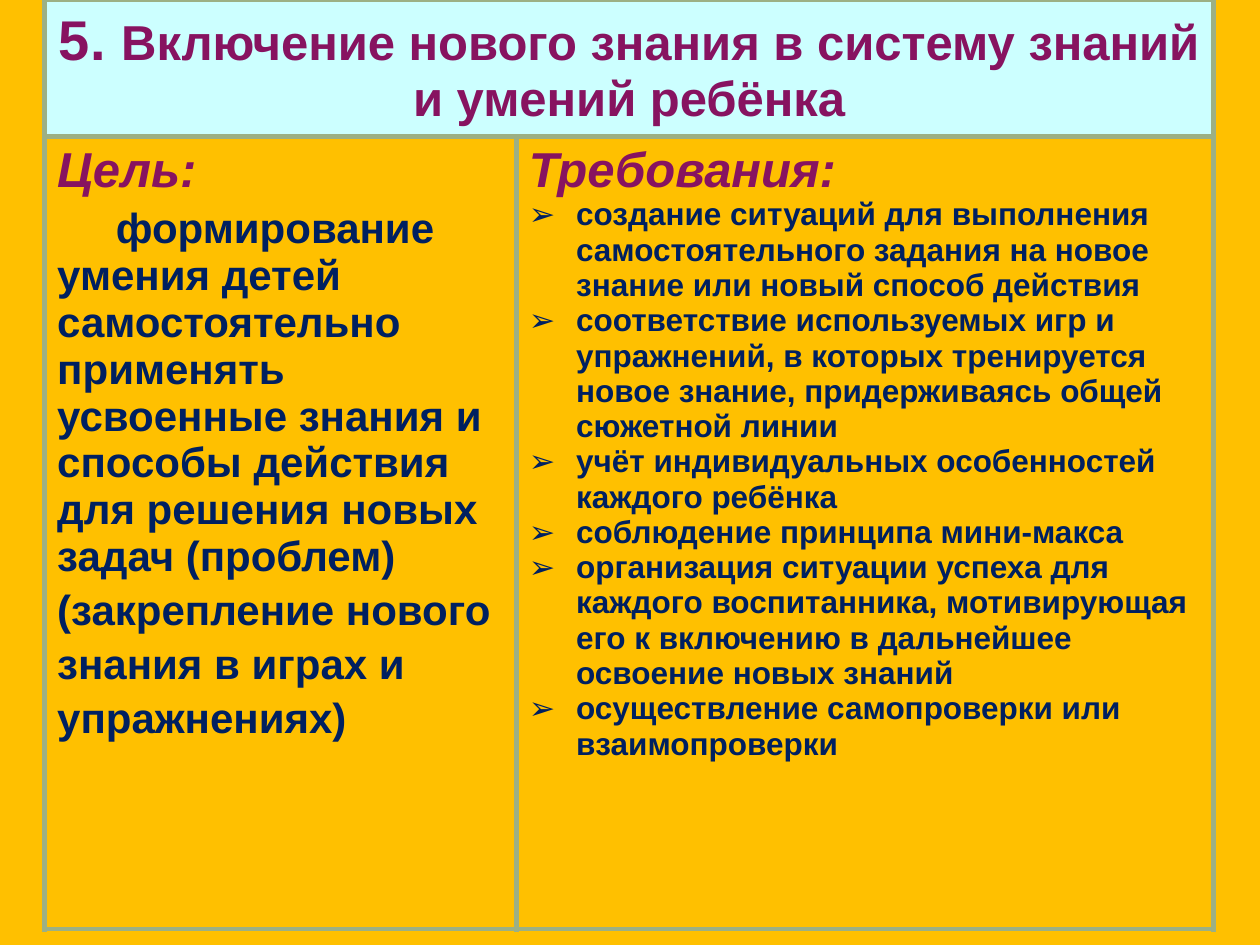
from lxml.etree import SubElement as Sub
from pptx import Presentation
from pptx.dml.color import RGBColor as RGB
from pptx.enum.text import MSO_ANCHOR as Anchor, PP_ALIGN as Align
from pptx.oxml import parse_xml
from pptx.oxml.ns import qn
from pptx.util import Pt

GOLD = RGB(0xFF, 0xC0, 0x00)
ICE = RGB(0xCC, 0xFF, 0xFF)
PLUM = RGB(0x87, 0x13, 0x60)
NAVY = RGB(0x00, 0x20, 0x60)
SAGE = RGB(0x9C, 0xB0, 0x84)
NS = "http://schemas.openxmlformats.org/drawingml/2006/main"

COLS = (269.5, 398.5)
ROWS = (78, 453)
HANG = 27

GOAL = ("формирование умения детей самостоятельно применять усвоенные знания "
        "и способы действия для решения новых задач (проблем)")
NOTE = "(закрепление нового знания в играх и упражнениях)"
NEEDS = (
    "создание ситуаций для выполнения самостоятельного задания "
    "на новое знание или новый способ действия",
    "соответствие используемых игр и упражнений, в которых тренируется "
    "новое знание, придерживаясь общей сюжетной линии",
    "учёт индивидуальных особенностей каждого ребёнка",
    "соблюдение принципа мини-макса",
    "организация ситуации успеха для каждого воспитанника, мотивирующая "
    "его к включению в дальнейшее освоение новых знаний",
    "осуществление самопроверки или взаимопроверки",
)


class Deck:
    font = "Arial"
    edge = 3

    def __init__(self, width, height):
        self.prs = Presentation()
        self.prs.slide_width, self.prs.slide_height = Pt(width), Pt(height)
        self.slide = self.prs.slides.add_slide(self.prs.slide_layouts[6])
        fill = self.slide.background.fill
        fill.solid()
        fill.fore_color.rgb = GOLD

    def table(self, left, top, cols, rows):
        frame = self.slide.shapes.add_table(
            len(rows), len(cols), Pt(left), Pt(top), Pt(sum(cols)), Pt(sum(rows)))
        grid = frame.table
        grid.first_row = grid.horz_banding = False
        for col, width in zip(grid.columns, cols):
            col.width = Pt(width)
        for row, height in zip(grid.rows, rows):
            row.height = Pt(height)
        for cell in grid.iter_cells():
            cell.fill.background()
            self.border(cell)
        return grid

    def border(self, cell):
        props = cell._tc.get_or_add_tcPr()
        for spot, side in enumerate("LRTB"):
            props.insert(spot, parse_xml(
                f'<a:ln{side} xmlns:a="{NS}" w="{Pt(self.edge)}"><a:solidFill>'
                f'<a:srgbClr val="{SAGE}"/></a:solidFill></a:ln{side}>'))

    def run(self, para, text, size, color, slant=False):
        run = para.add_run()
        run.text = text
        font = run.font
        font.name, font.size, font.bold, font.italic = self.font, Pt(size), True, slant
        font.color.rgb = color

    def para(self, cell, text, size, color, slant=False, left=0, first=0,
             before=0, line=None, mark=None):
        """Fill the cell's empty first paragraph, or add one after the last."""
        frame = cell.text_frame
        para = frame.add_paragraph() if frame.text else frame.paragraphs[0]
        para.space_before = Pt(before)
        if line:
            para.line_spacing = line
        props = para._p.get_or_add_pPr()
        props.set("marL", str(Pt(left)))
        props.set("indent", str(Pt(first)))
        if mark:
            Sub(props, qn("a:buFont"), typeface=self.font)
            Sub(props, qn("a:buChar"), char=mark)
        self.run(para, text, size, color, slant)
        return para


def main():
    deck = Deck(720, 540)
    grid = deck.table(25.5, 0, COLS, ROWS)

    title = grid.cell(0, 0)
    title.merge(grid.cell(0, 1))
    title.fill.solid()
    title.fill.fore_color.rgb = ICE
    title.vertical_anchor = Anchor.MIDDLE
    head = deck.para(title, "5. ", 32, PLUM)
    head.alignment = Align.CENTER
    deck.run(head, "Включение нового знания в систему знаний и умений ребёнка", 28, PLUM)

    goal, needs = grid.cell(1, 0), grid.cell(1, 1)
    for cell, text in ((goal, "Цель:"), (needs, "Требования:")):
        deck.para(cell, text, 28, PLUM, slant=True, left=HANG, first=-HANG)
    deck.para(goal, GOAL, 24, NAVY, first=33.5, before=4.8)
    deck.para(goal, NOTE, 24, NAVY, line=1.15)
    for text in NEEDS:
        deck.para(needs, text, 18, NAVY, left=HANG, first=-HANG, mark="➢")

    deck.prs.save("out.pptx")


if __name__ == "__main__":
    main()
